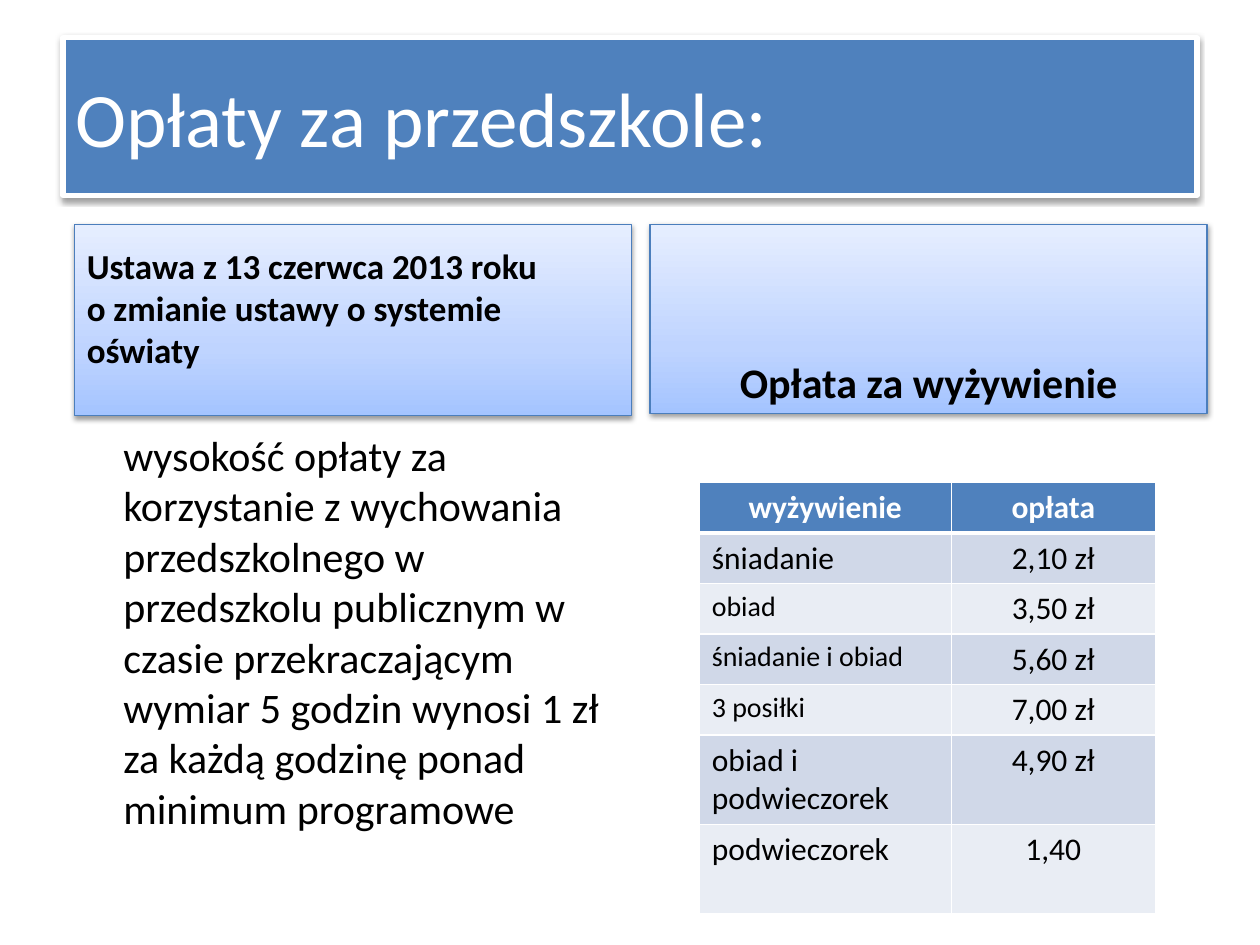
from copy import deepcopy

from lxml.etree import SubElement
from pptx import Presentation
from pptx.dml.color import RGBColor
from pptx.enum.shapes import MSO_SHAPE
from pptx.enum.text import MSO_ANCHOR, PP_ALIGN
from pptx.oxml.ns import qn
from pptx.util import Inches, Pt

FONT = "Calibri"
BLUE, EDGE, WHITE, BLACK = "4F81BD", "4B7EBC", "FFFFFF", "000000"
BANDS = ("D0D8E8", "E9EDF4")
GRADIENT = ((0, "A4C4FF"), (0.35, "BFD4FF"), (1, "E6EEFF"))
LEFT, RIGHT = PP_ALIGN.LEFT, PP_ALIGN.CENTER
CENTER = PP_ALIGN.CENTER

MEALS = (
    ("śniadanie", 18, "2,10 zł"),
    ("obiad", 16, "3,50 zł"),
    ("śniadanie i obiad", 16, "5,60 zł"),
    ("3 posiłki", 16, "7,00 zł"),
    ("obiad i podwieczorek", 18, "4,90 zł"),
    ("podwieczorek", 18, "1,40"),
)


def rgb(color):
    return RGBColor.from_string(color)


def write(tf, lines, size, color=BLACK, bold=False, align=LEFT):
    """Fill the first paragraph, with a line break between the lines."""
    p = tf.paragraphs[0]
    p.alignment = align
    for i, line in enumerate(lines):
        if i:
            p.add_line_break()
        r = p.add_run()
        r.text = line
        r.font.name, r.font.size, r.font.bold = FONT, Pt(size), bold
        r.font.color.rgb = rgb(color)
    return p


def add_shadow(sp):
    sp.shadow.inherit = False
    effects = sp._element.spPr.find(qn("a:effectLst"))
    shadow = SubElement(effects, qn("a:outerShdw"), blurRad=str(Pt(3.1)),
                        dist=str(Pt(1.6)), dir="5400000", rotWithShape="0")
    color = SubElement(shadow, qn("a:srgbClr"), val=BLACK)
    SubElement(color, qn("a:alpha"), val="38000")


def add_panel(s, box, line, width, anchor):
    sp = s.shapes.add_shape(MSO_SHAPE.RECTANGLE, *map(Inches, box))
    sp.line.color.rgb = rgb(line)
    sp.line.width = Pt(width)
    add_shadow(sp)
    sp.text_frame.word_wrap = True
    sp.text_frame.vertical_anchor = anchor
    return sp


def add_title(s, box, text):
    sp = add_panel(s, box, WHITE, 3, MSO_ANCHOR.MIDDLE)
    sp.fill.solid()
    sp.fill.fore_color.rgb = rgb(BLUE)
    write(sp.text_frame, [text], 44, WHITE)


def add_heading(s, box, lines, size, align, bottom=0.05):
    sp = add_panel(s, box, EDGE, 0.75, MSO_ANCHOR.BOTTOM)
    sp.fill.gradient()
    sp.fill.gradient_angle = 90
    stops = sp._element.spPr.find(".//" + qn("a:gsLst"))
    stops.append(deepcopy(stops[0]))
    for stop, (position, color) in zip(sp.fill.gradient_stops, GRADIENT):
        stop.position = position
        stop.color.rgb = rgb(color)
    sp.text_frame.margin_bottom = Inches(bottom)
    write(sp.text_frame, lines, size, bold=True, align=align)


def add_body(s, box, text):
    tf = s.shapes.add_textbox(*map(Inches, box)).text_frame
    tf.word_wrap = True
    p = write(tf, [text], 24)
    p._p.get_or_add_pPr().set("marL", str(Inches(0.38)))


def style_cell(cell, fill, top, bottom):
    tcPr = cell._tc.get_or_add_tcPr()
    for side, width in (("L", 1), ("R", 1), ("T", top), ("B", bottom)):
        ln = SubElement(tcPr, qn(f"a:ln{side}"), w=str(Pt(width)))
        SubElement(SubElement(ln, qn("a:solidFill")), qn("a:srgbClr"), val=WHITE)
    cell.fill.solid()
    cell.fill.fore_color.rgb = rgb(fill)


def add_price_table(s, left, top, widths, heights):
    table = s.shapes.add_table(len(heights), len(widths), Inches(left), Inches(top),
                               Inches(sum(widths)), Inches(sum(heights))).table
    for col, width in zip(table.columns, widths):
        col.width = Inches(width)
    for row, height in zip(table.rows, heights):
        row.height = Inches(height)
    for c, text in enumerate(("wyżywienie", "opłata")):
        cell = table.cell(0, c)
        style_cell(cell, BLUE, 1, 3)
        write(cell.text_frame, [text], 18, WHITE, True, CENTER)
    for i, (meal, size, price) in enumerate(MEALS):
        entries = ((meal, size, LEFT), (price, 18, CENTER))
        for c, (text, points, align) in enumerate(entries):
            cell = table.cell(i + 1, c)
            style_cell(cell, BANDS[i % 2], 1 if i else 3, 1)
            write(cell.text_frame, [text], points, align=align)


def main():
    prs = Presentation()
    prs.slide_width, prs.slide_height = Inches(10), Inches(7.5)
    s = prs.slides.add_slide(prs.slide_layouts[6])
    column = 4.42
    add_title(s, (0.5, 0.3, 9, 1.25), "Opłaty za przedszkole:")
    add_heading(s, (0.59, 1.78, column, 1.52),
                ["Ustawa z 13 czerwca 2013 roku", "o zmianie ustawy o systemie oświaty"],
                20, LEFT, bottom=0.36)
    add_body(s, (0.5, 3.36, column, 3.34),
             "wysokość opłaty za korzystanie z wychowania przedszkolnego w "
             "przedszkolu publicznym w czasie przekraczającym wymiar 5 godzin "
             "wynosi 1 zł za każdą godzinę ponad minimum programowe")
    add_heading(s, (5.16, 1.78, column, 1.5), ["Opłata za wyżywienie"], 24, CENTER)
    add_price_table(s, 5.55, 3.83, (2, 1.62), [0.4] * 5 + [0.71] * 2)
    prs.save("out.pptx")


if __name__ == "__main__":
    main()
